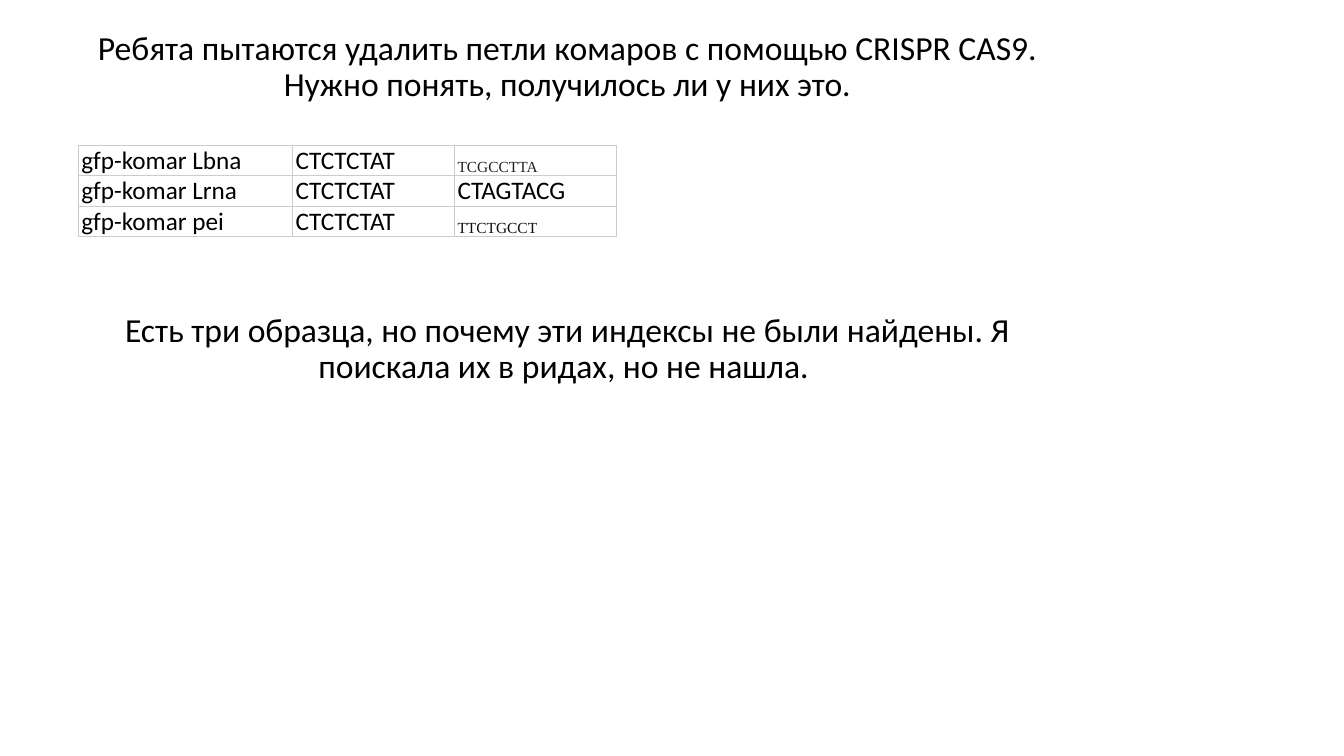
from lxml import etree
from pptx import Presentation, util as u
from pptx.dml.color import RGBColor
from pptx.enum import text
from pptx.oxml import ns

BLACK = RGBColor(0x00, 0x00, 0x00)
CHARCOAL = RGBColor(0x22, 0x22, 0x22)
NEAR_BLACK = RGBColor(0x0D, 0x0D, 0x0D)
GRID = RGBColor(0xCC, 0xCC, 0xCC)


def apply(target, values):
    for name, value in values.items():
        setattr(target, name, value)


class SlideBuilder:
    font = "Calibri"
    cell_format = {
        "margin_left": u.Cm(0.07), "margin_right": u.Cm(0.07),
        "margin_top": 0, "margin_bottom": 0,
        "vertical_anchor": text.MSO_ANCHOR.BOTTOM,
    }
    paragraph_format = {"alignment": text.PP_ALIGN.CENTER, "line_spacing": 0.9}

    def __init__(self, prs):
        self.s = prs.slides.add_slide(prs.slide_layouts[6])

    def run(self, p, words, size, color=BLACK, font=None):
        r = p.add_run()
        r.text = words
        apply(r.font, {"name": font or self.font, "size": u.Pt(size)})
        r.font.color.rgb = color

    def note(self, top, words):
        sp = self.s.shapes.add_textbox(u.Cm(1.6), u.Cm(top), u.Cm(25.4), u.Cm(2.59))
        tf = sp.text_frame
        tf.word_wrap = True
        p = tf.paragraphs[0]
        apply(p, self.paragraph_format)
        self.run(p, words, 24)

    def border(self, cell):
        tc_pr = cell._tc.get_or_add_tcPr()
        for side in ("lnL", "lnR", "lnT", "lnB"):
            ln = etree.SubElement(tc_pr, ns.qn(f"a:{side}"), w=str(u.Pt(0.75)))
            fill = etree.SubElement(ln, ns.qn("a:solidFill"))
            etree.SubElement(fill, ns.qn("a:srgbClr"), val=str(GRID))

    def table(self, left, top, widths, row_height, rows, styles):
        sp = self.s.shapes.add_table(
            len(rows), len(widths), u.Cm(left), u.Cm(top),
            u.Cm(sum(widths)), u.Cm(row_height * len(rows)))
        tbl = sp.table
        apply(tbl, {"first_row": False, "horz_banding": False})
        for column, width in zip(tbl.columns, widths):
            column.width = u.Cm(width)
        for i, row in enumerate(rows):
            for j, words in enumerate(row):
                cell = tbl.cell(i, j)
                apply(cell, self.cell_format)
                self.border(cell)
                cell.fill.background()
                style = styles.get(words, {"size": 18})
                self.run(cell.text_frame.paragraphs[0], words, **style)


def main():
    prs = Presentation()
    apply(prs, {"slide_width": u.Cm(33.87), "slide_height": u.Cm(19.05)})
    slide = SlideBuilder(prs)
    slide.note(0.66, "Ребята пытаются удалить петли комаров с помощью CRISPR CAS9. "
                     "Нужно понять, получилось ли у них это.")
    small = {"size": 11, "font": "Times New Roman"}
    slide.table(
        1.98, 3.66, [5.4, 4.08, 4.08], 0.77,
        [["gfp-komar Lbna", "CTCTCTAT", "TCGCCTTA"],
         ["gfp-komar Lrna", "CTCTCTAT", "CTAGTACG"],
         ["gfp-komar pei", "CTCTCTAT", "TTCTGCCT"]],
        {"TCGCCTTA": {**small, "color": CHARCOAL},
         "TTCTGCCT": {**small, "color": NEAR_BLACK}})
    slide.note(7.77, "Есть три образца, но почему эти индексы не были найдены. "
                     "Я поискала их в ридах, но не нашла. ")
    prs.save("out.pptx")


if __name__ == "__main__":
    main()
